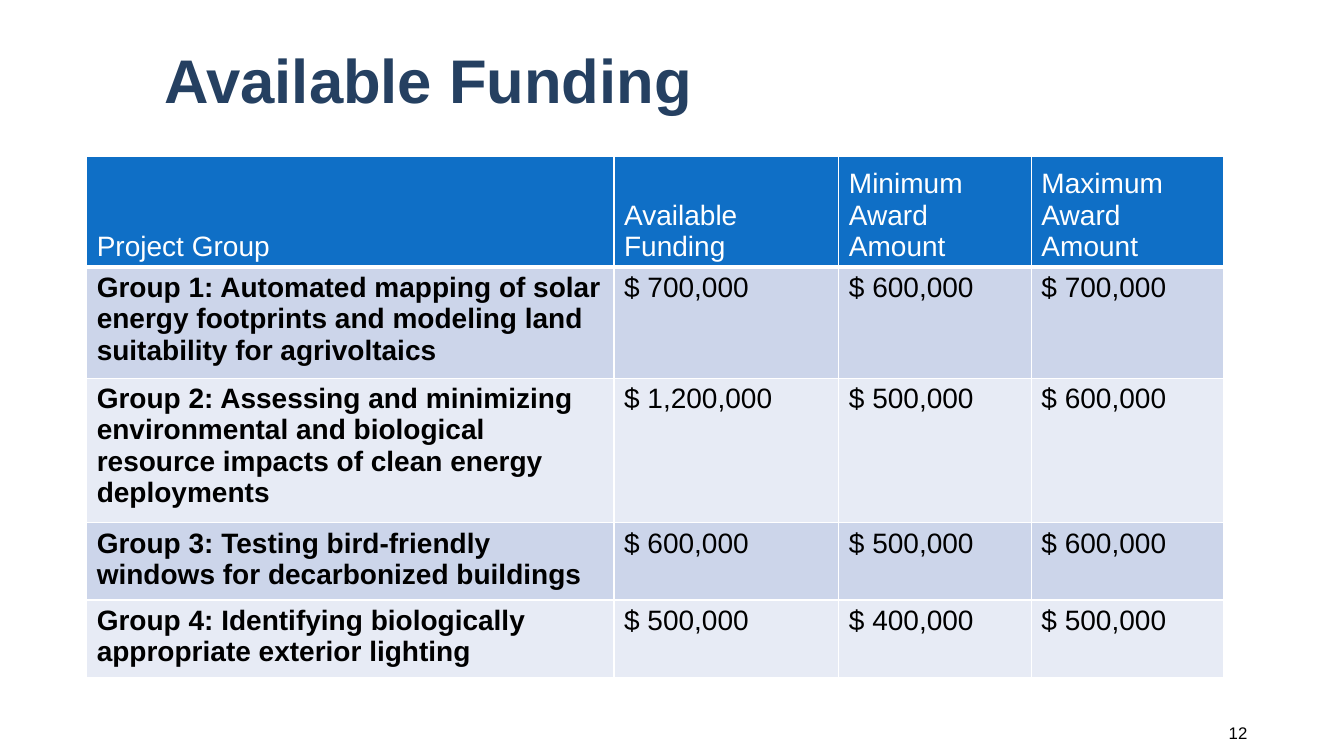
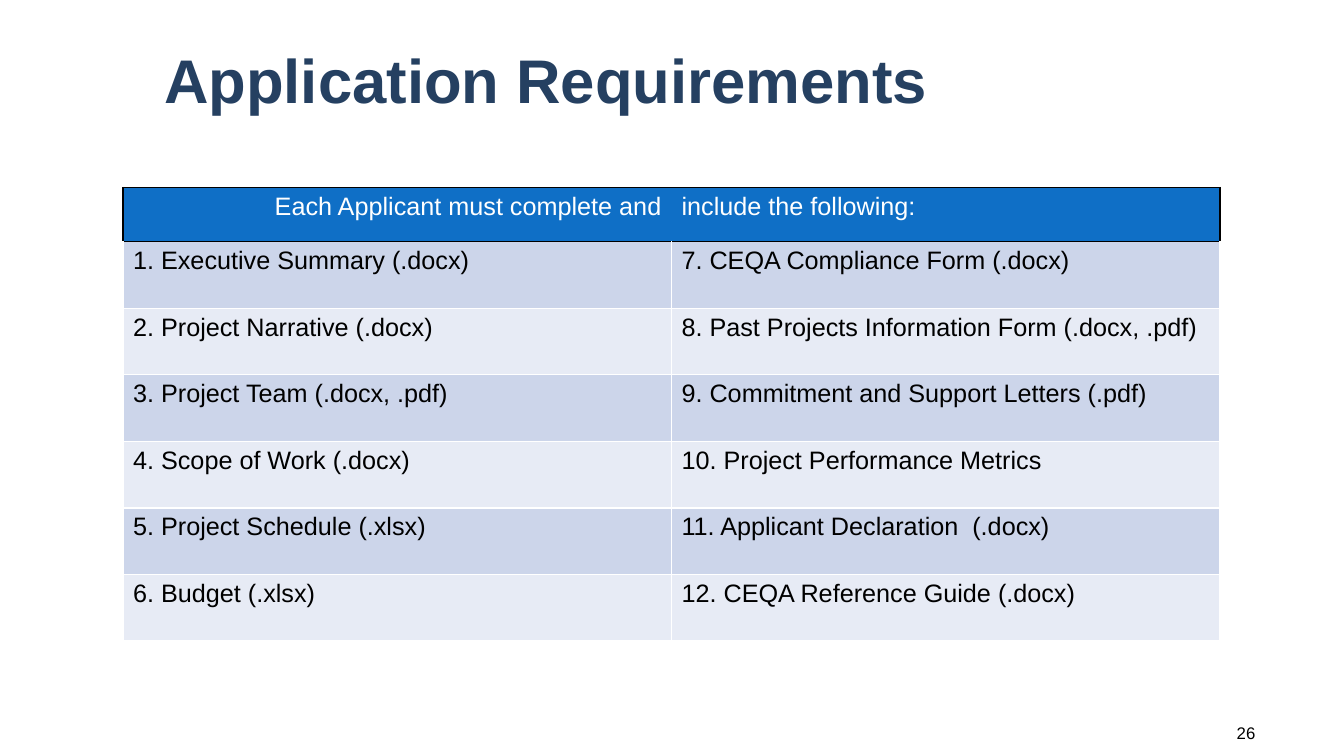
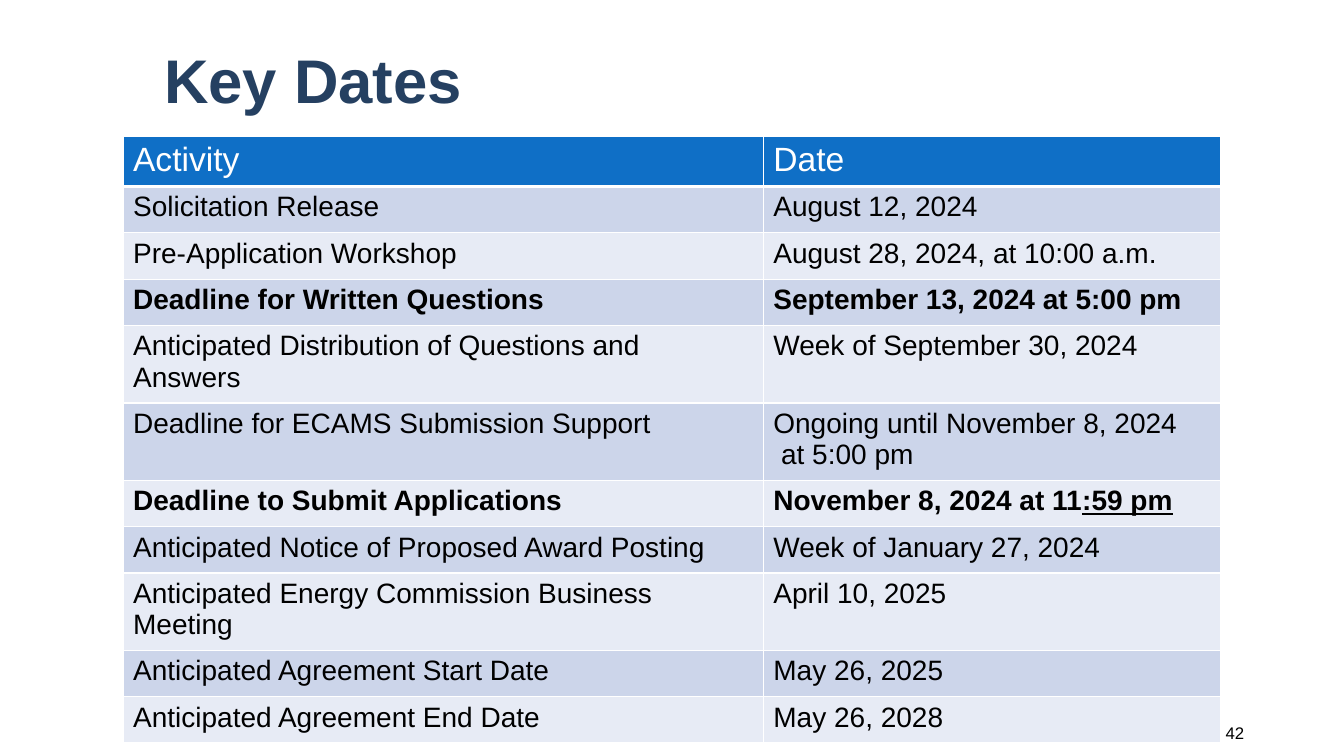
from lxml.etree import SubElement
from pptx import Presentation
from pptx.dml.color import RGBColor
from pptx.enum.text import MSO_ANCHOR, PP_ALIGN
from pptx.oxml.ns import qn
from pptx.util import Inches, Pt

FONT = "Arial"
NAVY = RGBColor(0x25, 0x40, 0x61)
BLUE = RGBColor(0x0F, 0x6F, 0xC6)
WHITE = RGBColor(0xFF, 0xFF, 0xFF)
BLACK = RGBColor(0x00, 0x00, 0x00)
BANDS = (RGBColor(0xCC, 0xD5, 0xEA), RGBColor(0xE7, 0xEB, 0xF5))
ONE_LINE, TWO_LINES = 0.46, 0.72

# A cell is a string, or a list of paragraphs; a paragraph is a string,
# or a list of (text, underlined) runs.
SLIDES = [
    dict(
        title="Available Funding", number="12", number_left=10.5,
        at=(0.86, 1.55), cols=[5.23, 2.23, 1.91, 1.91],
        heights=[1.05, 1.02, 1.33, TWO_LINES, TWO_LINES],
        head_size=20, size=20, head_anchor=MSO_ANCHOR.BOTTOM,
        bold_cols=[0],
        rows=[
            ("Project Group", "Available Funding",
             "Minimum Award Amount", "Maximum Award Amount"),
            ("Group 1: Automated mapping of solar energy footprints and "
             "modeling land suitability for agrivoltaics",
             "$ 700,000", "$ 600,000", "$ 700,000"),
            ("Group 2: Assessing and minimizing environmental and biological "
             "resource impacts of clean energy deployments",
             "$ 1,200,000", "$ 500,000", "$ 600,000"),
            ("Group 3: Testing bird-friendly windows for decarbonized buildings",
             "$ 600,000", "$ 500,000", "$ 600,000"),
            ("Group 4: Identifying biologically appropriate exterior lighting",
             "$ 500,000", "$ 400,000", "$ 500,000"),
        ],
    ),
    dict(
        title="Application Requirements", number="26", number_left=10.58,
        at=(1.22, 1.86), cols=[5.44, 5.44], heights=[0.54] + [0.66] * 6,
        head_size=18, size=18, framed_head=True,
        head_aligns=[PP_ALIGN.RIGHT, PP_ALIGN.LEFT],
        rows=[
            ("Each Applicant must complete and", "include the following:"),
            ("1. Executive Summary (.docx)", "7. CEQA Compliance Form (.docx)"),
            ("2. Project Narrative (.docx)",
             "8. Past Projects Information Form (.docx, .pdf)"),
            ("3. Project Team (.docx, .pdf)",
             "9. Commitment and Support Letters (.pdf)"),
            ("4. Scope of Work (.docx)", "10. Project Performance Metrics"),
            ("5. Project Schedule (.xlsx)", "11. Applicant Declaration  (.docx)"),
            ("6. Budget (.xlsx)", "12. CEQA Reference Guide (.docx)"),
        ],
    ),
    dict(
        title="Key Dates", number="42", number_left=10.47,
        at=(1.22, 1.35), cols=[6.35, 4.54],
        heights=[ONE_LINE] * 4 + [TWO_LINES] * 2 + [ONE_LINE] * 2
        + [TWO_LINES] + [ONE_LINE] * 2,
        head_size=24, size=20, bold_rows=[3, 6],
        rows=[
            ("Activity", "Date"),
            ("Solicitation Release", "August 12, 2024"),
            ("Pre-Application Workshop", "August 28, 2024, at 10:00 a.m."),
            ("Deadline for Written Questions", "September 13, 2024 at 5:00 pm"),
            ("Anticipated Distribution of Questions and Answers",
             "Week of September 30, 2024"),
            ("Deadline for ECAMS Submission Support",
             ["Ongoing until November 8, 2024", " at 5:00 pm"]),
            ("Deadline to Submit Applications",
             [[("November 8, 2024 at 11", False), (":59 pm", True)]]),
            ("Anticipated Notice of Proposed Award Posting",
             "Week of January 27, 2024"),
            ("Anticipated Energy Commission Business Meeting", "April 10, 2025"),
            ("Anticipated Agreement Start Date", "May 26, 2025"),
            ("Anticipated Agreement End Date", "May 26, 2028"),
        ],
    ),
]


def write(tf, content, size, color=BLACK, bold=False, align=PP_ALIGN.LEFT,
          spacing=None):
    paragraphs = [content] if isinstance(content, str) else content
    for i, runs in enumerate(paragraphs):
        p = tf.add_paragraph() if i else tf.paragraphs[0]
        p.alignment = align
        p.line_spacing = spacing
        for text, underlined in [(runs, False)] if isinstance(runs, str) else runs:
            r = p.add_run()
            r.text = text
            r.font.name, r.font.size, r.font.bold = FONT, Pt(size), bold
            r.font.underline = underlined
            r.font.color.rgb = color


def add_text(s, box, content, **fmt):
    tf = s.shapes.add_textbox(*map(Inches, box)).text_frame
    tf.word_wrap = True
    tf.vertical_anchor = MSO_ANCHOR.MIDDLE
    write(tf, content, **fmt)


def set_borders(cell, edges):
    """Draw the L, R, T and B edges; an edge is (colour, points) or None."""
    tcPr = cell._tc.get_or_add_tcPr()
    for side in "LRTB":
        ln = SubElement(tcPr, qn("a:ln" + side))
        if edges[side] is None:
            SubElement(ln, qn("a:noFill"))
            continue
        color, points = edges[side]
        ln.set("w", str(Pt(points)))
        fill = SubElement(ln, qn("a:solidFill"))
        SubElement(fill, qn("a:srgbClr")).set("val", str(color))


def cell_edges(row, col, last_col, framed_head):
    edges = dict.fromkeys("LRTB", (WHITE, 1))
    under_head = (BLACK, 1) if framed_head else (WHITE, 3)
    if row == 0:
        if framed_head:
            edges["T"] = (BLACK, 1)
            edges["L"] = None if col else (BLACK, 1)
            edges["R"] = (BLACK, 1) if col == last_col else None
        edges["B"] = under_head
    elif row == 1:
        edges["T"] = under_head
    return edges


def add_grid(s, d):
    rows, cols, heights = d["rows"], d["cols"], d["heights"]
    box = (*d["at"], sum(cols), sum(heights))
    table = s.shapes.add_table(len(rows), len(cols), *map(Inches, box)).table
    for column, width in zip(table.columns, cols):
        column.width = Inches(width)
    for i, values in enumerate(rows):
        table.rows[i].height = Inches(heights[i])
        for j, value in enumerate(values):
            cell = table.cell(i, j)
            set_borders(cell, cell_edges(i, j, len(cols) - 1,
                                         d.get("framed_head", False)))
            cell.fill.solid()
            if i == 0:
                cell.fill.fore_color.rgb = BLUE
                cell.vertical_anchor = d.get("head_anchor", MSO_ANCHOR.TOP)
                aligns = d.get("head_aligns", [PP_ALIGN.LEFT] * len(cols))
                write(cell.text_frame, value, d["head_size"], WHITE,
                      align=aligns[j])
            else:
                cell.fill.fore_color.rgb = BANDS[(i - 1) % 2]
                bold = i in d.get("bold_rows", []) or j in d.get("bold_cols", [])
                write(cell.text_frame, value, d["size"], bold=bold)


def main():
    prs = Presentation()
    prs.slide_width, prs.slide_height = Inches(13.33), Inches(7.5)
    for d in SLIDES:
        s = prs.slides.add_slide(prs.slide_layouts[6])
        add_text(s, (1.53, 0.26, 10.89, 1.14), d["title"], size=44, color=NAVY,
                 bold=True, spacing=0.9)
        add_grid(s, d)
        add_text(s, (d["number_left"], 7.07, 1.97, 0.4), d["number"], size=12,
                 align=PP_ALIGN.RIGHT)
    prs.save("out.pptx")


if __name__ == "__main__":
    main()
